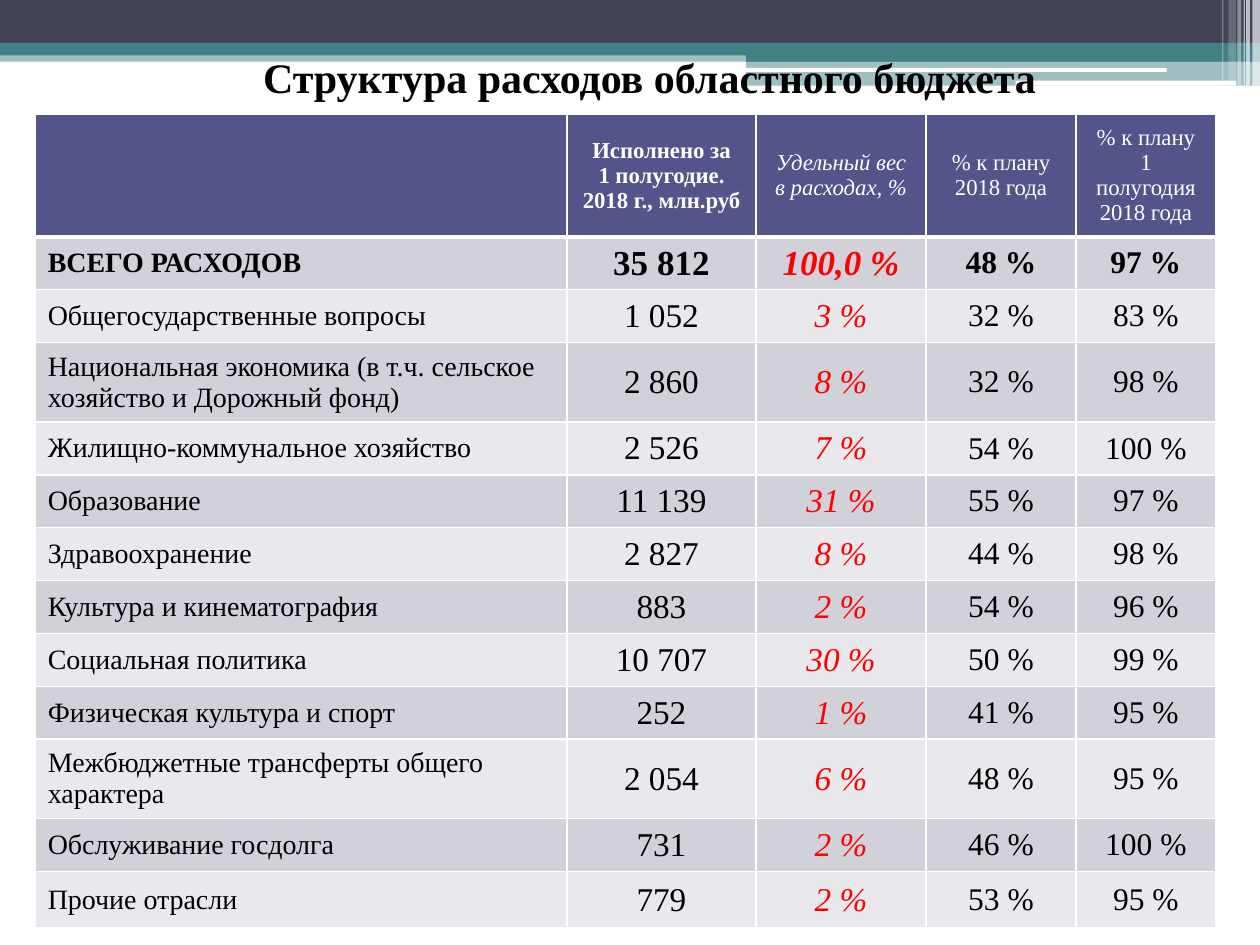
from lxml import etree
from pptx import Presentation
from pptx.dml.color import RGBColor
from pptx.enum import shapes, text
from pptx.oxml import ns
from pptx.util import Inches, Pt

FONT = "Times New Roman"
BLACK = RGBColor(0x00, 0x00, 0x00)
WHITE = RGBColor(0xFF, 0xFF, 0xFF)
RED = RGBColor(0xFF, 0x00, 0x00)
NAVY = RGBColor(0x42, 0x44, 0x56)
TEAL = RGBColor(0x43, 0x80, 0x86)
VIOLET = RGBColor(0x53, 0x54, 0x8A)
BAND_DARK = RGBColor(0xD1, 0xD1, 0xDA)
BAND_LIGHT = RGBColor(0xE9, 0xE9, 0xED)
CENTER = text.PP_ALIGN.CENTER
LEFT = text.PP_ALIGN.LEFT


def write(frame, words, *, size, color=BLACK, bold=False, italic=False, align=CENTER):
    """Fill a text frame; a newline starts a paragraph, a vertical tab a line."""
    frame.text = words
    for para in frame.paragraphs:
        para.alignment = align
        for span in para.runs:
            span.font.name = FONT
            span.font.size = Pt(size)
            span.font.color.rgb = color
            span.font.bold = bold
            span.font.italic = italic


def set_borders(cell, bottom=1):
    properties = cell._tc.get_or_add_tcPr()
    for side, width in (("L", 1), ("R", 1), ("T", 1), ("B", bottom)):
        line = etree.SubElement(properties, ns.qn(f"a:ln{side}"), w=str(Pt(width)))
        fill = etree.SubElement(line, ns.qn("a:solidFill"))
        etree.SubElement(fill, ns.qn("a:srgbClr"), val=str(WHITE))


deck = Presentation()
deck.slide_width = Inches(10)
deck.slide_height = Inches(7.5)
page = deck.slides.add_slide(deck.slide_layouts[5])

# Header bands: left, top, width, height, colour, opacity in percent, rounded
bands = [
    (0, 0.4, 10, 0.09, TEAL, 50, False),
    (0, 0, 10, 0.34, NAVY, 100, False),
    (0, 0.34, 10, 0.1, TEAL, 100, False),
    (5.92, 0.39, 4.08, 0.1, TEAL, 100, False),
    (5.92, 0.48, 4.08, 0.2, TEAL, 50, False),
    (5.91, 0.54, 3.35, 0.03, WHITE, 100, True),
    (8.06, 0.64, 1.75, 0.04, WHITE, 100, True),
    (9.94, 0, 0.06, 0.68, WHITE, 65, False),
    (9.89, 0, 0.03, 0.68, WHITE, 65, False),
    (9.87, 0, 0.01, 0.68, WHITE, 60, False),
    (9.82, 0, 0.03, 0.68, WHITE, 40, False),
    (9.75, 0, 0.06, 0.64, WHITE, 20, False),
    (9.7, 0, 0.01, 0.64, WHITE, 30, False),
]
for left, top, width, height, color, opacity, rounded in bands:
    kind = shapes.MSO_SHAPE.ROUNDED_RECTANGLE if rounded else shapes.MSO_SHAPE.RECTANGLE
    band = page.shapes.add_shape(
        kind, Inches(left), Inches(top), Inches(width), Inches(height))
    band.shadow.inherit = False
    band.line.fill.background()
    band.fill.solid()
    band.fill.fore_color.rgb = color
    if opacity < 100:
        tint = band.element.spPr.find(".//" + ns.qn("a:srgbClr"))
        etree.SubElement(tint, ns.qn("a:alpha"), val=str(opacity * 1000))

# The title lies over the bands
title = page.shapes.title
title.element.getparent().append(title.element)
title.left, title.top = Inches(0.31), Inches(0.36)
title.width, title.height = Inches(9.69), Inches(0.5)
title.text_frame.auto_size = text.MSO_AUTO_SIZE.NONE
title.text_frame.vertical_anchor = text.MSO_ANCHOR.MIDDLE
write(title.text_frame, "Структура расходов областного бюджета", size=24, bold=True)

headings = [
    "",
    "Исполнено за\v1 полугодие.\v2018 г., млн.руб",
    "Удельный вес в расходах, %",
    "% к плану\v2018 года",
    "% к плану\v1 полугодия\n2018 года",
]
# Item, million roubles, share, percent of year plan, percent of half-year plan
spending = [
    ("ВСЕГО РАСХОДОВ", "35 812", "100,0", 48, 97),
    ("Общегосударственные вопросы", "1 052", 3, 32, 83),
    ("Национальная экономика (в т.ч. сельское хозяйство и Дорожный фонд)",
     "2 860", 8, 32, 98),
    ("Жилищно-коммунальное хозяйство", "2 526", 7, 54, 100),
    ("Образование", "11 139", 31, 55, 97),
    ("Здравоохранение", "2 827", 8, 44, 98),
    ("Культура и кинематография", "883", 2, 54, 96),
    ("Социальная политика", "10 707", 30, 50, 99),
    ("Физическая культура и спорт", "252", 1, 41, 95),
    ("Межбюджетные трансферты общего характера", "2 054", 6, 48, 95),
    ("Обслуживание госдолга", "731", 2, 46, 100),
    ("Прочие отрасли", "779", 2, 53, 95),
]
column_widths = [4.22, 1.5, 1.35, 1.19, 1.11]
row_heights = [0.97, 0.42, 0.42, 0.63] + [0.42] * 6 + [0.63, 0.42, 0.45]

budget = page.shapes.add_table(
    len(row_heights), len(column_widths),
    Inches(0.28), Inches(0.91), Inches(9.37), Inches(6.46)).table
for column, width in zip(budget.columns, column_widths):
    column.width = Inches(width)
for row, height in zip(budget.rows, row_heights):
    row.height = Inches(height)

for c, heading in enumerate(headings):
    cell = budget.cell(0, c)
    set_borders(cell, bottom=3)
    cell.fill.solid()
    cell.fill.fore_color.rgb = VIOLET
    cell.vertical_anchor = text.MSO_ANCHOR.MIDDLE
    write(cell.text_frame, heading, size=13, color=WHITE, bold=c == 1, italic=c == 2)

for r, (item, amount, *percents) in enumerate(spending, start=1):
    total = r == 1
    figure_size = 20 if total else 19
    sizes = [16, figure_size, figure_size, 18, 18]
    values = [item, amount] + [f"{percent} %" for percent in percents]
    for c, value in enumerate(values):
        cell = budget.cell(r, c)
        set_borders(cell)
        cell.fill.solid()
        cell.fill.fore_color.rgb = BAND_DARK if r % 2 else BAND_LIGHT
        cell.vertical_anchor = text.MSO_ANCHOR.MIDDLE
        write(cell.text_frame, value, size=sizes[c], color=RED if c == 2 else BLACK,
              bold=total, italic=c == 2, align=CENTER if c else LEFT)

deck.save("out.pptx")
